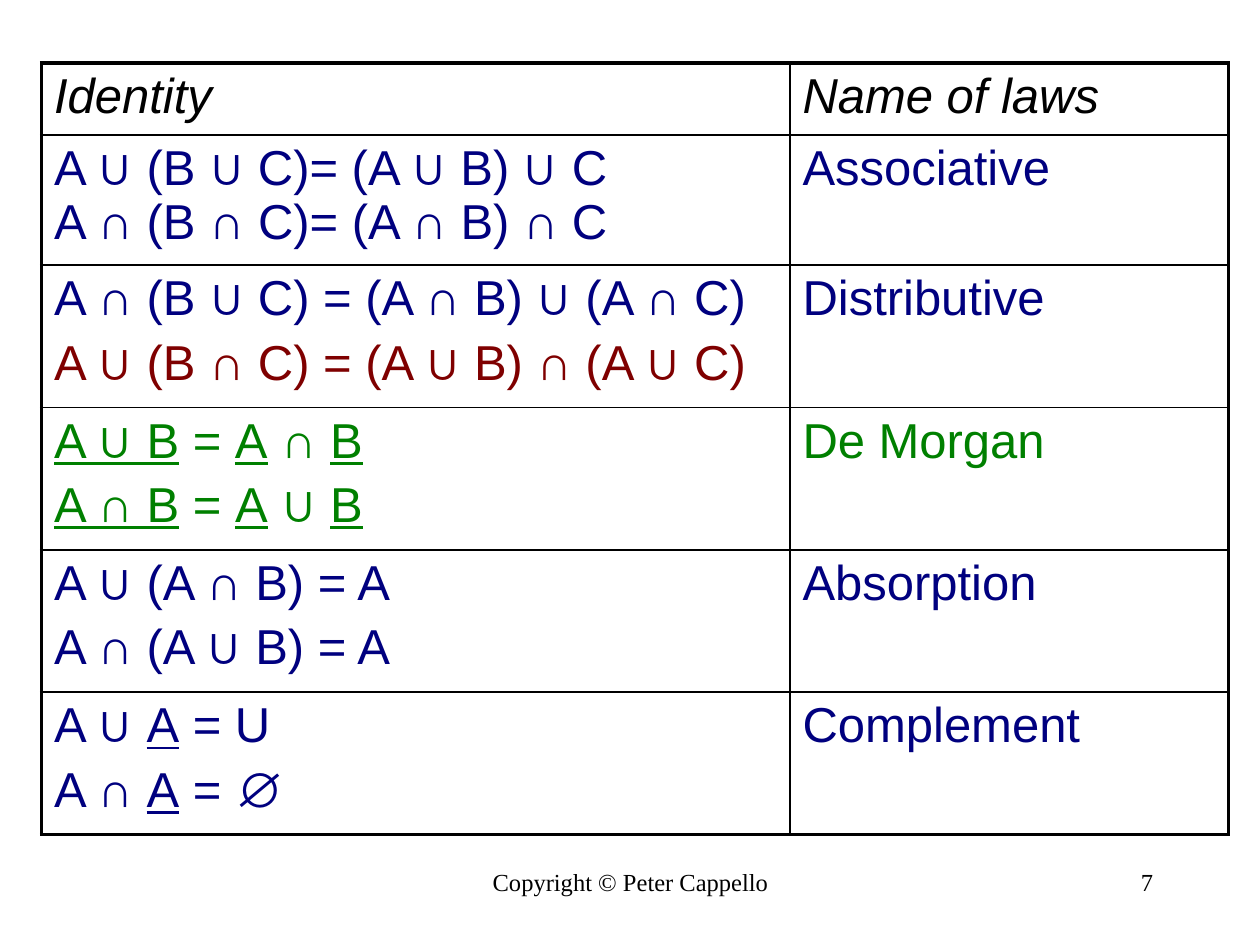
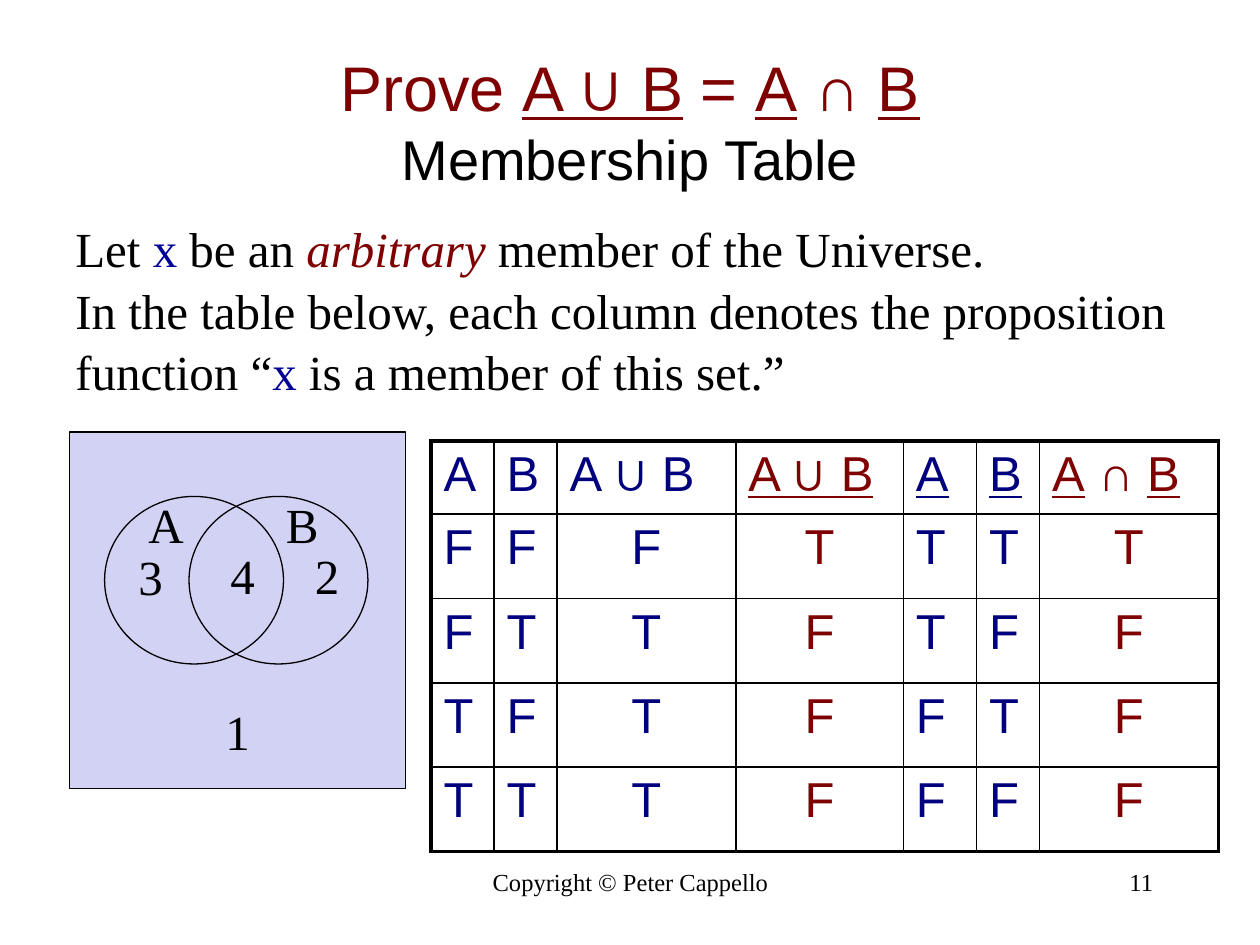
from itertools import groupby

from lxml.etree import SubElement
from pptx import Presentation
from pptx.dml.color import RGBColor
from pptx.enum.shapes import MSO_SHAPE as SHAPE
from pptx.enum.text import MSO_ANCHOR as ANCHOR, PP_ALIGN as ALIGN
from pptx.oxml.ns import qn
from pptx.util import Inches, Pt

BLACK, NAVY, MAROON, GREEN = "000000", "00007F", "7F0000", "008000"
VARIABLE_BLUE, UNIVERSE_FILL = "000099", "D2D2F4"
SANS, SERIF = "Arial", "Times New Roman"
BODY_SIZE, FOOTER_SIZE = 28, 14
OUTER_BORDER, INNER_BORDER = 2.25, 1
SET_SYMBOLS = "∪∩∅"


def rgb(hex_color):
    return RGBColor.from_string(hex_color)


def symbol_runs(markup):
    """Yield (text, underlined, bold): _..._ underlines, set symbols are bold."""
    for index, part in enumerate(markup.split("_")):
        for bold, chars in groupby(part, lambda char: char in SET_SYMBOLS):
            yield "".join(chars), index % 2 == 1, bold


def set_borders(cell, widths):
    """Draw the left, right, top and bottom borders with the given widths."""
    properties = cell._tc.get_or_add_tcPr()
    for position, (side, width) in enumerate(zip("LRTB", widths)):
        line = SubElement(properties, qn(f"a:ln{side}"), w=str(Pt(width)))
        fill = SubElement(line, qn("a:solidFill"))
        SubElement(fill, qn("a:srgbClr"), val=BLACK)
        properties.insert(position, line)


class Deck:
    """Holds the presentation, its shared style and the current slide."""

    def __init__(self):
        self.presentation = Presentation()
        self.presentation.slide_width = Inches(10)
        self.presentation.slide_height = Inches(7.5)
        self.slide = None

    def add_slide(self, number):
        blank = self.presentation.slide_layouts[6]
        self.slide = self.presentation.slides.add_slide(blank)
        self.text(3.42, 6.83, 3.17, 0.5, ["Copyright © Peter Cappello"],
                  size=FOOTER_SIZE, align=ALIGN.CENTER)
        self.text(7.17, 6.83, 2.08, 0.5, [str(number)],
                  size=FOOTER_SIZE, align=ALIGN.RIGHT)

    def add_runs(self, paragraph, spans, size, font, color=BLACK, italic=False):
        """Add a string, or (text, overrides) spans, as formatted runs."""
        if isinstance(spans, str):
            spans = [(spans, {})]
        for markup, overrides in spans:
            for text, underlined, bold in symbol_runs(markup):
                run = paragraph.add_run()
                run.text = text
                run.font.name = font
                run.font.size = Pt(overrides.get("size", size))
                run.font.color.rgb = rgb(overrides.get("color", color))
                run.font.italic = overrides.get("italic", italic)
                run.font.underline = underlined
                run.font.bold = bold

    def text(self, left, top, width, height, lines, size=BODY_SIZE, font=SERIF,
             align=ALIGN.LEFT, anchor=ANCHOR.TOP, wrap=True, spacing=1):
        box = self.slide.shapes.add_textbox(
            Inches(left), Inches(top), Inches(width), Inches(height))
        frame = box.text_frame
        frame.word_wrap = wrap
        frame.vertical_anchor = anchor
        for index, line in enumerate(lines):
            paragraph = frame.add_paragraph() if index else frame.paragraphs[0]
            paragraph.alignment = align
            paragraph.line_spacing = spacing
            self.add_runs(paragraph, line, size, font)

    def shape(self, kind, left, top, width, height, fill=None):
        shape = self.slide.shapes.add_shape(
            kind, Inches(left), Inches(top), Inches(width), Inches(height))
        shape.shadow.inherit = False
        shape.line.color.rgb = rgb(BLACK)
        shape.line.width = Pt(0.75)
        if fill:
            shape.fill.solid()
            shape.fill.fore_color.rgb = rgb(fill)
        else:
            shape.fill.background()

    def table(self, left, top, widths, heights):
        """Add an unfilled table with a heavy frame and thin inner lines."""
        rows, columns = len(heights), len(widths)
        table = self.slide.shapes.add_table(
            rows, columns, Inches(left), Inches(top),
            Inches(sum(widths)), Inches(sum(heights))).table
        table.first_row = table.horz_banding = False
        for column, width in zip(table.columns, widths):
            column.width = Inches(width)
        for row, height in zip(table.rows, heights):
            row.height = Inches(height)
        for r in range(rows):
            for c in range(columns):
                cell = table.cell(r, c)
                cell.fill.background()
                on_frame = (c == 0, c == columns - 1, r == 0, r == rows - 1)
                set_borders(cell, [OUTER_BORDER if edge else INNER_BORDER
                                   for edge in on_frame])
        return table

    def fill_cell(self, cell, lines, color, italic=False, align=ALIGN.LEFT,
                  gap=5.6):
        frame = cell.text_frame
        for index, line in enumerate(lines):
            paragraph = frame.add_paragraph() if index else frame.paragraphs[0]
            paragraph.alignment = align
            paragraph.space_before = Pt(gap if index else 0)
            self.add_runs(paragraph, line, BODY_SIZE, SANS, color, italic)


def build_identities(deck):
    deck.add_slide(7)
    laws = [
        ("Associative", NAVY, ["A ∪ (B ∪ C)= (A ∪ B) ∪ C",
                               "A ∩ (B ∩ C)= (A ∩ B) ∩ C"]),
        ("Distributive", NAVY, ["A ∩ (B ∪ C) = (A ∩ B) ∪ (A ∩ C)",
                                [("A ∪ (B ∩ C) = (A ∪ B) ∩ (A ∪ C)",
                                  {"color": MAROON})]]),
        ("De Morgan", GREEN, ["_A ∪ B_ = _A_ ∩ _B_", "_A ∩ B_ = _A_ ∪ _B_"]),
        ("Absorption", NAVY, ["A ∪ (A ∩ B) = A", "A ∩ (A ∪ B) = A"]),
        ("Complement", NAVY, ["A ∪ _A_ = U", "A ∩ _A_ = ∅"]),
    ]
    table = deck.table(0.33, 0.5, [5.94, 3.48], [0.57, 1.03] + [1.13] * 4)
    for column, heading in enumerate(["Identity", "Name of laws"]):
        deck.fill_cell(table.cell(0, column), [heading], BLACK, italic=True)
    for row, (law, color, identities) in enumerate(laws, start=1):
        gap = 0 if law == "Associative" else 5.6
        deck.fill_cell(table.cell(row, 0), identities, color, gap=gap)
        deck.fill_cell(table.cell(row, 1), [law], color)


def build_venn_diagram(deck):
    deck.shape(SHAPE.RECTANGLE, 0.55, 3.43, 2.67, 2.83, UNIVERSE_FILL)
    for left in (0.83, 1.5):
        deck.shape(SHAPE.OVAL, left, 3.94, 1.42, 1.33)
    labels = [("1", 1.69, 5.5), ("2", 2.4, 4.26), ("3", 1, 4.27),
              ("4", 1.73, 4.26), ("A", 1.08, 3.86), ("B", 2.17, 3.86)]
    for label, left, top in labels:
        width = 0.4 if label.isdigit() else 0.48
        deck.text(left, top, width, 0.57, [label], wrap=False, spacing=1.04)


def build_membership_table(deck):
    columns = [("A", 0.5, NAVY), ("B", 0.5, NAVY), ("A ∪ B", 1.42, NAVY),
               ("_A ∪ B_", 1.33, MAROON), ("_A_", 0.58, NAVY),
               ("_B_", 0.5, NAVY), ("_A_ ∩ _B_", 1.42, MAROON)]
    memberships = ["FFFTTTT", "FTTFTFF", "TFTFFTF", "TTTFFFF"]
    table = deck.table(3.42, 3.5, [width for _, width, _ in columns],
                       [0.58] + [0.67] * len(memberships))
    for c, (heading, width, color) in enumerate(columns):
        deck.fill_cell(table.cell(0, c), [heading], color)
        align = ALIGN.CENTER if width > 1 else ALIGN.LEFT
        for r, values in enumerate(memberships, start=1):
            deck.fill_cell(table.cell(r, c), [values[c]], color, align=align)


def build_proof(deck):
    deck.add_slide(11)
    deck.text(0.75, 0.33, 8.5, 1.25, [
        [("Prove _A ∪ B_ = _A_ ∩ _B_", {"color": MAROON})],
        [("Membership Table", {"size": 32})],
    ], size=36, font=SANS, align=ALIGN.CENTER, anchor=ANCHOR.MIDDLE)
    build_membership_table(deck)
    build_venn_diagram(deck)
    variable = ("x", {"color": VARIABLE_BLUE})
    deck.text(0.5, 1.67, 8.94, 1.51, [
        [("Let ", {}), variable, (" be an ", {}),
         ("arbitrary", {"color": MAROON, "italic": True}),
         (" member of the Universe.", {})],
        "In the table below, each column denotes the proposition",
        [("function “", {}), variable, (" is a member of this set.”", {})],
    ], spacing=1.04)


def main():
    deck = Deck()
    build_identities(deck)
    build_proof(deck)
    deck.presentation.save("out.pptx")


if __name__ == "__main__":
    main()
